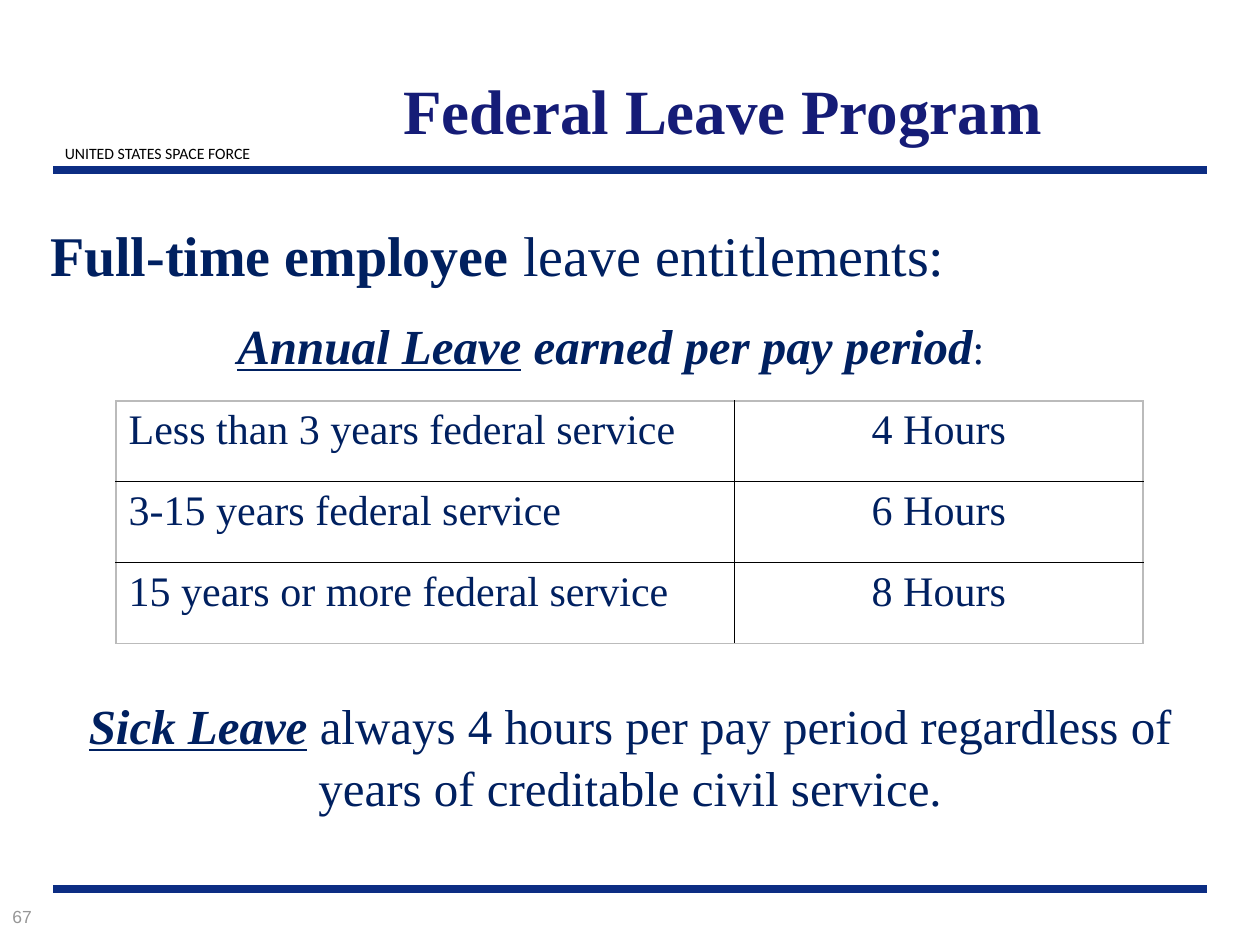
from lxml.etree import SubElement
from pptx import Presentation
from pptx.dml.color import RGBColor
from pptx.enum.shapes import MSO_CONNECTOR
from pptx.enum.text import MSO_ANCHOR, PP_ALIGN
from pptx.oxml.ns import qn
from pptx.util import Cm, Pt

COLORS = {
    "rule": "0C2D83",
    "title": "151C77",
    "body": "002060",
    "label": "000000",
    "number": "969696",
    "grid": "000000",
    "frame": "BBBBBB",
}
SERIF = "Times New Roman"


def rgb(name):
    return RGBColor.from_string(COLORS[name])


def write(paragraph, text, size=28, font=SERIF, color="body", bold=False,
          italic=False, underline=False):
    run = paragraph.add_run()
    run.text = text
    style = run.font
    style.name, style.size = font, Pt(size)
    style.bold, style.italic, style.underline = bold, italic, underline
    style.color.rgb = rgb(color)


def draw_border(cell, side, color):
    """Add one cell edge; side is L, R, T or B, called in that order."""
    edge = SubElement(cell._tc.get_or_add_tcPr(), qn(f"a:ln{side}"), w=str(Pt(1)))
    fill = SubElement(edge, qn("a:solidFill"))
    SubElement(fill, qn("a:srgbClr"), val=COLORS[color])


class LeaveSlide:
    def __init__(self, slide, rule_left, rule_right):
        self.slide = slide
        self.rule_left, self.rule_right = rule_left, rule_right

    def rule(self, y):
        line = self.slide.shapes.add_connector(
            MSO_CONNECTOR.STRAIGHT, Cm(self.rule_left), Cm(y), Cm(self.rule_right), Cm(y))
        line.line.color.rgb = rgb("rule")
        line.line.width = Pt(4.5)
        SubElement(line._element.spPr, qn("a:effectLst"))

    def text(self, left, top, width, height, wrap=True, anchor=MSO_ANCHOR.TOP):
        box = self.slide.shapes.add_textbox(Cm(left), Cm(top), Cm(width), Cm(height))
        frame = box.text_frame
        frame.word_wrap = wrap
        frame.vertical_anchor = anchor
        return frame

    def table(self, left, top, widths, row_height, rows):
        grid = self.slide.shapes.add_table(
            len(rows), len(widths), Cm(left), Cm(top),
            Cm(sum(widths)), Cm(row_height * len(rows))).table
        grid.first_row = grid.horz_banding = False
        for column, width in zip(grid.columns, widths):
            column.width = Cm(width)
        last_row, last_column = len(rows) - 1, len(widths) - 1
        for r, row in enumerate(rows):
            for c, words in enumerate(row):
                cell = grid.cell(r, c)
                paragraph = cell.text_frame.paragraphs[0]
                paragraph.alignment = PP_ALIGN.CENTER if c else PP_ALIGN.LEFT
                write(paragraph, words, size=24)
                outer = {"L": c == 0, "R": c == last_column,
                         "T": r == 0, "B": r == last_row}
                for side, is_outer in outer.items():
                    draw_border(cell, side, "frame" if is_outer else "grid")
                cell.fill.background()


def main():
    deck = Presentation()
    deck.slide_width, deck.slide_height = Cm(25.4), Cm(19.05)
    page = LeaveSlide(deck.slides.add_slide(deck.slide_layouts[6]), 1.07, 24.33)

    for y in (17.93, 3.43):
        page.rule(y)

    service = page.text(0.76, 2.77, 4.83, 0.64, wrap=False).paragraphs[0]
    service.alignment = PP_ALIGN.CENTER
    write(service, "UNITED STATES SPACE FORCE", size=9, font="Calibri", color="label")

    title = page.text(4.65, 0.61, 19.84, 3.18, anchor=MSO_ANCHOR.MIDDLE).paragraphs[0]
    title.alignment = PP_ALIGN.CENTER
    write(title, "Federal Leave Program", size=36, color="title", bold=True)

    body = page.text(0.76, 4.32, 23.32, 3.4)
    entitlements = body.paragraphs[0]
    write(entitlements, "Full-time employee ", size=32, bold=True)
    write(entitlements, "leave entitlements:", size=32)
    annual = body.add_paragraph()
    annual.alignment = PP_ALIGN.CENTER
    annual.space_before = Pt(16)
    write(annual, "Annual Leave", bold=True, italic=True, underline=True)
    write(annual, " earned per pay period", bold=True, italic=True)
    write(annual, ": ", size=24)

    number = page.text(0, 18.14, 3.38, 0.84).paragraphs[0]
    write(number, "67", size=10, font="Arial", color="number")

    page.table(2.34, 8.08, (12.47, 8.23), 1.63, [
        ("Less than 3 years federal service", "4 Hours"),
        ("3-15 years federal service", "6 Hours"),
        ("15 years or more federal service", "8 Hours"),
    ])

    sick = page.text(1.07, 13.84, 23.27, 2.64).paragraphs[0]
    sick.alignment = PP_ALIGN.CENTER
    sick.line_spacing = 1.05
    write(sick, "Sick Leave", bold=True, italic=True, underline=True)
    write(sick, " ", bold=True, italic=True)
    write(sick, "always 4 hours per pay period regardless of years of "
                "creditable civil service.")

    deck.save("out.pptx")


if __name__ == "__main__":
    main()
